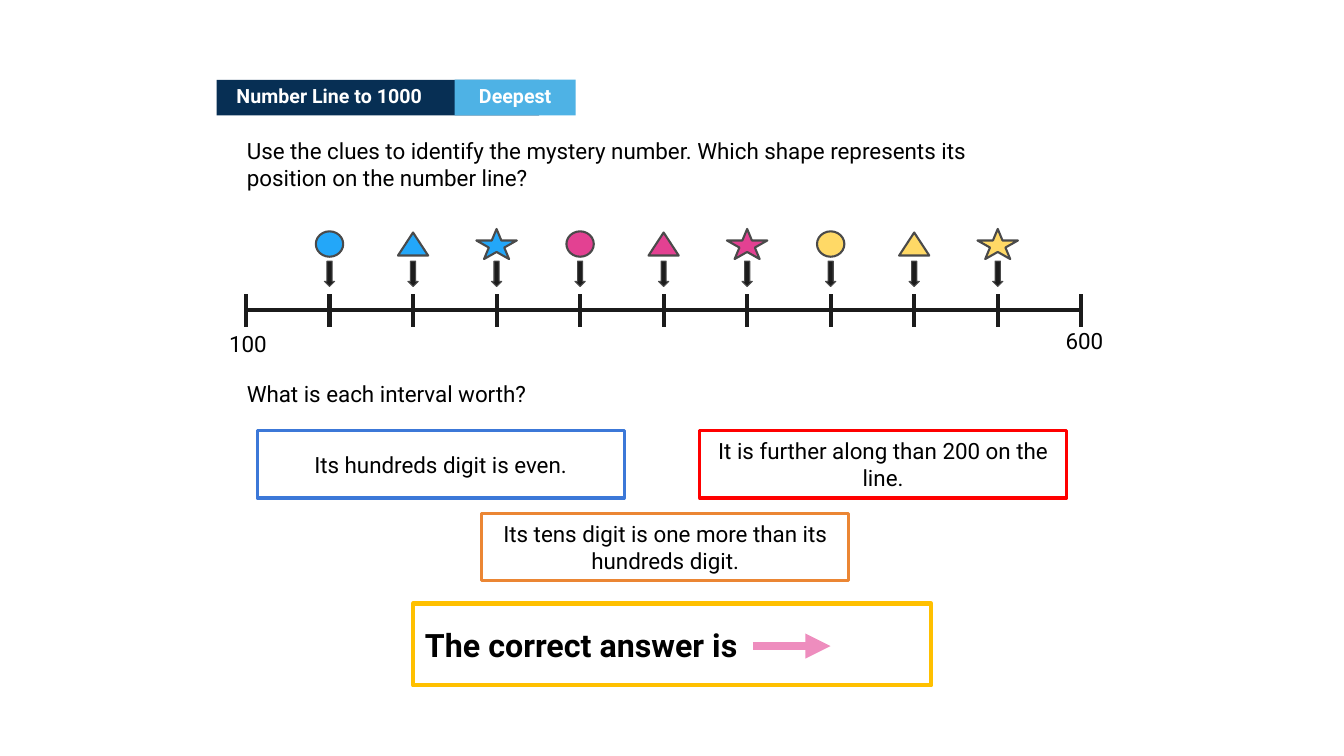
"""Build a number line slide with clues to a mystery number."""
from lxml.etree import SubElement
from pptx import Presentation
from pptx.dml.color import RGBColor
from pptx.enum.shapes import MSO_CONNECTOR, MSO_SHAPE
from pptx.enum.text import MSO_ANCHOR as Anchor, MSO_AUTO_SIZE as AutoSize, PP_ALIGN as Align
from pptx.oxml.ns import qn
from pptx.util import Cm, Pt

TITLE = "Number Line to 1000"
LEVEL = "Deepest"
TASK = ("Use the clues to identify the mystery number. "
        "Which shape represents its position on the number line?")
QUESTION = "What is each interval worth?"
ANSWER = "The correct answer is"
END_LABELS = [("100", 5.41, 8.08), ("600", 26.49, 8.0)]
CLUES = [
    ("Its hundreds digit is even.", "clue blue", 6.48, 10.85),
    ("It is further along than 200 on the line.", "clue red", 17.63, 10.85),
    ("Its tens digit is one more than its hundreds digit.", "clue orange", 12.14, 12.93),
]
MARKER_COLORS = ["blue", "pink", "yellow"]
MARKER_FORMS = [
    (MSO_SHAPE.OVAL, 0.69, 0.64),
    (MSO_SHAPE.ISOSCELES_TRIANGLE, 0.76, 0.58),
    (MSO_SHAPE.STAR_5_POINT, 1.02, 0.76),
]
COLORS = {
    "black": "000000", "white": "FFFFFF", "navy": "072F54", "sky": "4EB2E5",
    "axis": "1B1B1B", "pointer": "1C1C1C", "outline": "4A4A4A",
    "blue": "23A7F9", "pink": "E34192", "yellow": "FFD966",
    "clue blue": "3C78D8", "clue red": "FF0000", "clue orange": "EB8634",
    "gold": "FFC000", "arrow pink": "EE8DBE",
}
FONT = "Roboto"
INSETS = (0.25, 0.25, 0.25, 0.25)
BANNER_INSETS = (0.5, 0.1, 0.5, 0.2)
AXIS_LEFT, AXIS_RIGHT, AXIS_Y = 6.2, 27.25, 7.82
INTERVALS, TICK_HALF = 10, 0.41
STEP = (AXIS_RIGHT - AXIS_LEFT) / INTERVALS
MARKER_Y, POINTER_TOP = 6.15, 6.58
BANNER_TOP, BANNER_HEIGHT = 2.01, 0.9


def color(name):
    return RGBColor.from_string(COLORS[name])


def place(shape, left, top, width, height):
    shape.left, shape.top = Cm(left), Cm(top)
    shape.width, shape.height = Cm(width), Cm(height)


def write(shape, text, size=16, ink="black", bold=False, align=Align.LEFT,
          anchor=Anchor.TOP, insets=INSETS):
    frame = shape.text_frame
    frame.text = text
    frame.word_wrap = True
    frame.auto_size = AutoSize.NONE
    frame.vertical_anchor = anchor
    (frame.margin_left, frame.margin_top,
     frame.margin_right, frame.margin_bottom) = map(Cm, insets)
    paragraph = frame.paragraphs[0]
    paragraph.alignment = align
    paragraph.space_before = Pt(0)
    font = paragraph.runs[0].font
    font.name, font.size, font.bold = FONT, Pt(size), bold
    font.color.rgb = color(ink)


def add_text(slide, text, left, top, width, height, **style):
    box = slide.shapes.add_textbox(Cm(left), Cm(top), Cm(width), Cm(height))
    write(box, text, **style)


def add_form(slide, form, left, top, width, height, fill, line=None, weight=1.5):
    shape = slide.shapes.add_shape(form, Cm(left), Cm(top), Cm(width), Cm(height))
    shape.shadow.inherit = False
    shape.fill.solid()
    shape.fill.fore_color.rgb = color(fill)
    if line:
        shape.line.color.rgb = color(line)
        shape.line.width = Pt(weight)
    else:
        shape.line.fill.background()
    return shape


def add_line(slide, x1, y1, x2, y2, ink, weight, arrow=False):
    line = slide.shapes.add_connector(
        MSO_CONNECTOR.STRAIGHT, Cm(x1), Cm(y1), Cm(x2), Cm(y2))
    line.line.color.rgb = color(ink)
    line.line.width = Pt(weight)
    if arrow:
        SubElement(line.line._get_or_add_ln(), qn("a:tailEnd"), type="triangle")
    SubElement(line._element.spPr, qn("a:effectLst"))


def add_headings(slide):
    title, task = slide.shapes.title, slide.placeholders[1]
    place(title, 5.46, BANNER_TOP, 8.13, BANNER_HEIGHT)
    title.fill.solid()
    title.fill.fore_color.rgb = color("navy")
    banner = dict(size=14, ink="white", bold=True, anchor=Anchor.MIDDLE, insets=BANNER_INSETS)
    write(title, TITLE, **banner)
    level = add_form(slide, MSO_SHAPE.RECTANGLE, 11.46, BANNER_TOP, 3.05, BANNER_HEIGHT, "sky")
    write(level, LEVEL, align=Align.CENTER, **banner)
    place(task, 5.97, 3.2, 19.99, 1.88)
    write(task, TASK)
    properties = task.text_frame.paragraphs[0]._p.get_or_add_pPr()
    properties.set("marL", "0")
    properties.set("indent", "0")
    SubElement(properties, qn("a:buNone"))


def add_number_line(slide):
    add_line(slide, AXIS_LEFT, AXIS_Y, AXIS_RIGHT, AXIS_Y, "axis", 3)
    for tick in range(INTERVALS + 1):
        x = AXIS_LEFT + tick * STEP
        add_line(slide, x, AXIS_Y - TICK_HALF, x, AXIS_Y + TICK_HALF, "axis", 3)
    markers = [(form, fill) for fill in MARKER_COLORS for form in MARKER_FORMS]
    for tick, ((form, width, height), fill) in enumerate(markers, start=1):
        x = AXIS_LEFT + tick * STEP
        add_form(slide, form, x - width / 2, MARKER_Y - height / 2, width, height,
                 fill, "outline")
        add_form(slide, MSO_SHAPE.DOWN_ARROW, x - 0.13, POINTER_TOP, 0.26, 0.64,
                 "pointer", "outline", 0.75)
    for label, left, top in END_LABELS:
        add_text(slide, label, left, top, 1.68, 1.19, align=Align.CENTER)


def add_clues(slide):
    add_text(slide, QUESTION, 5.97, 9.32, 9.73, 1.19)
    for text, line, left, top in CLUES:
        clue = add_form(slide, MSO_SHAPE.RECTANGLE, left, top, 9.25, 1.7, "white", line, 2.25)
        write(clue, text, align=Align.CENTER, anchor=Anchor.MIDDLE)


def add_answer(slide):
    add_form(slide, MSO_SHAPE.RECTANGLE, 10.41, 15.21, 13.06, 2.06, "white", "gold", 3)
    add_line(slide, 18.97, 16.28, 20.93, 16.28, "arrow pink", 6, arrow=True)
    add_text(slide, ANSWER, 10.46, 15.62, 8.97, 1.24, size=23, bold=True,
             insets=(0.25, 0.13, 0.25, 0.13))


def main():
    presentation = Presentation()
    presentation.slide_width, presentation.slide_height = Cm(33.87), Cm(19.05)
    slide = presentation.slides.add_slide(presentation.slide_layouts[1])
    add_headings(slide)
    add_number_line(slide)
    add_clues(slide)
    add_answer(slide)
    presentation.save("out.pptx")


if __name__ == "__main__":
    main()
